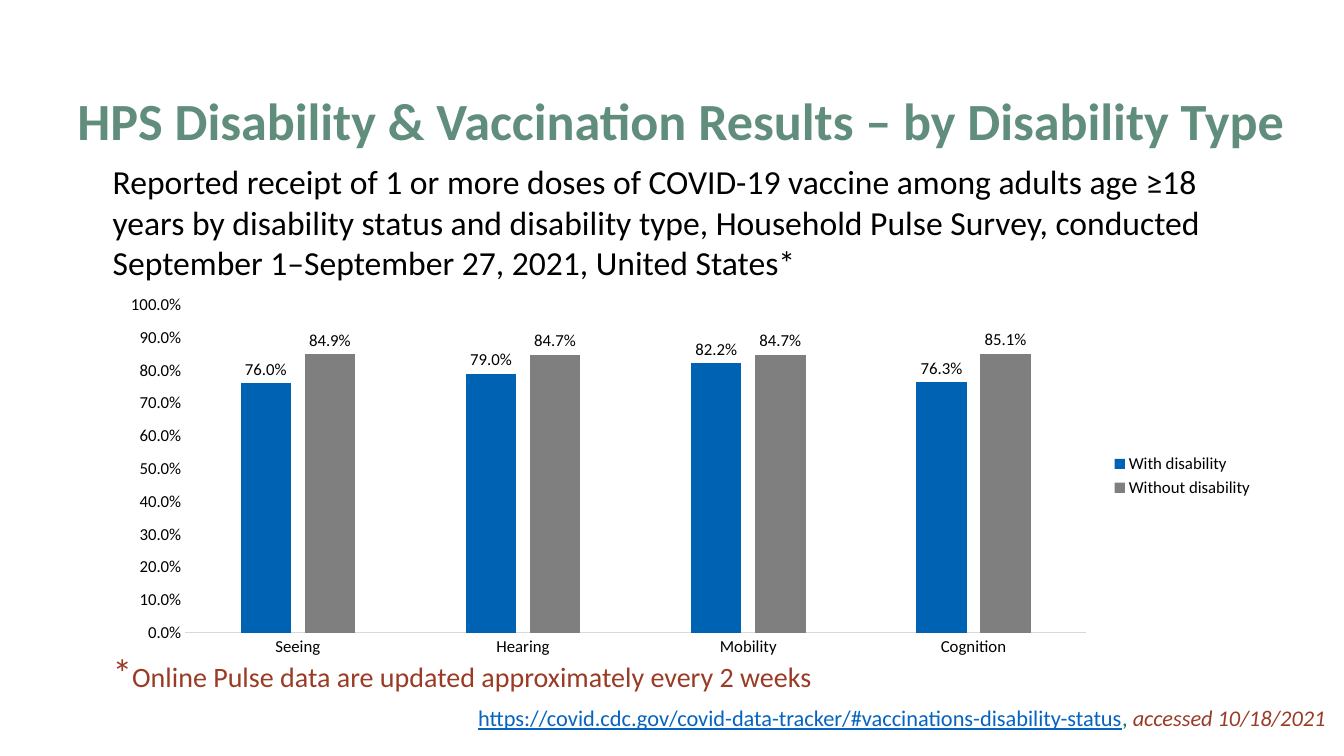
"""Build a slide on vaccination results by disability type."""
from dataclasses import dataclass, field

from pptx import Presentation
from pptx import util as u
from pptx.chart import data as chart_data
from pptx.dml import color
from pptx.enum import chart as chart_enum
from pptx.enum import text

FONT = "Calibri"
PERCENT = "0.0%"
COLORS = {
    "title": "618E7C",
    "body": "000000",
    "note": "9A3B26",
    "link": "0563C1",
    "comma": "007D57",
    "axis": "D9D9D9",
    "With disability": "0062B3",
    "Without disability": "7F7F7F",
}
CATEGORIES = ["Seeing", "Hearing", "Mobility", "Cognition"]
VACCINATED = {
    "With disability": [0.76, 0.79, 0.822, 0.763],
    "Without disability": [0.849, 0.847, 0.847, 0.851],
}


@dataclass(frozen=True)
class Box:
    left: float
    top: float
    width: float
    height: float

    def lengths(self) -> list[u.Length]:
        return [u.Pt(value) for value in (self.left, self.top, self.width, self.height)]


@dataclass(frozen=True)
class Run:
    words: str
    size: float
    color: str
    styles: dict = field(default_factory=dict)


@dataclass(frozen=True)
class TextBlock:
    box: Box
    runs: list[Run]
    frame_format: dict = field(default_factory=dict)
    paragraph_format: dict = field(default_factory=dict)


TEXT_BLOCKS = [
    TextBlock(
        Box(48.24, 21.6, 886.32, 90),
        [Run("HPS Disability & Vaccination Results – by Disability Type", 37.3, "title", {"bold": True})],
        {"vertical_anchor": text.MSO_ANCHOR.BOTTOM},
        {"line_spacing": u.Pt(40)},
    ),
    TextBlock(
        Box(73.44, 111.6, 833.04, 94.32),
        [Run(
            "Reported receipt of 1 or more doses of COVID-19 vaccine among adults age ≥18 "
            "years by disability status and disability type, Household Pulse Survey, conducted "
            "September 1–September 27, 2021, United States*", 24, "body",
        )],
    ),
    TextBlock(
        Box(73.44, 459.36, 806.4, 41.04),
        [
            Run("*", 28, "note"),
            Run("Online Pulse data are updated approximately every 2 weeks", 20, "note"),
        ],
    ),
    TextBlock(
        Box(0, 499.75, 954, 26.65),
        [
            Run("https://covid.cdc.gov/covid-data-tracker/#vaccinations-disability-status",
                16, "link", {"underline": True}),
            Run(", ", 16, "comma"),
            Run("accessed 10/18/2021", 16, "note", {"italic": True}),
        ],
        {},
        {"alignment": text.PP_ALIGN.RIGHT},
    ),
]
CHART_BOX = Box(77.04, 205.2, 825.84, 269.28)


def rgb(name: str) -> color.RGBColor:
    return color.RGBColor.from_string(COLORS[name])


def apply_format(target: object, values: dict) -> None:
    for name, value in values.items():
        setattr(target, name, value)


def format_font(font: object, size: float, color_name: str, styles: dict | None = None) -> None:
    apply_format(font, {"name": FONT, "size": u.Pt(size), **(styles or {})})
    font.color.rgb = rgb(color_name)


def draw_text(slide: object, block: TextBlock) -> None:
    frame = slide.shapes.add_textbox(*block.box.lengths()).text_frame
    apply_format(frame, {"word_wrap": True, **block.frame_format})
    paragraph = frame.paragraphs[0]
    apply_format(paragraph, block.paragraph_format)
    for item in block.runs:
        run = paragraph.add_run()
        run.text = item.words
        format_font(run.font, item.size, item.color, item.styles)


def draw_chart(slide: object, box: Box) -> None:
    rates = chart_data.CategoryChartData(number_format=PERCENT)
    rates.categories = CATEGORIES
    for name, values in VACCINATED.items():
        rates.add_series(name, values)
    chart = slide.shapes.add_chart(
        chart_enum.XL_CHART_TYPE.COLUMN_CLUSTERED, *box.lengths(), rates
    ).chart
    apply_format(chart, {"has_title": False, "has_legend": True})
    format_font(chart.font, 10, "body")
    apply_format(chart.legend, {
        "position": chart_enum.XL_LEGEND_POSITION.RIGHT,
        "include_in_layout": False,
    })
    format_font(chart.legend.font, 12, "body")

    for axis in (chart.category_axis, chart.value_axis):
        apply_format(axis, {
            "has_major_gridlines": False,
            "major_tick_mark": chart_enum.XL_TICK_MARK.NONE,
            "minor_tick_mark": chart_enum.XL_TICK_MARK.NONE,
        })
        format_font(axis.tick_labels.font, 12, "body")
    category_line = chart.category_axis.format.line
    category_line.color.rgb = rgb("axis")
    category_line.width = u.Pt(0.75)
    apply_format(chart.value_axis, {"minimum_scale": 0, "maximum_scale": 1, "major_unit": 0.1})
    chart.value_axis.format.line.fill.background()
    label_format = {"number_format": PERCENT, "number_format_is_linked": False}
    apply_format(chart.value_axis.tick_labels, label_format)

    plot = chart.plots[0]
    apply_format(plot, {"gap_width": 219, "overlap": -27, "vary_by_categories": False})
    for series in plot.series:
        series.format.fill.solid()
        series.format.fill.fore_color.rgb = rgb(series.name)
        labels = series.data_labels
        apply_format(labels, {
            **label_format,
            "show_value": True,
            "position": chart_enum.XL_LABEL_POSITION.OUTSIDE_END,
        })
        format_font(labels.font, 12, "body")


def main() -> None:
    presentation = Presentation()
    apply_format(presentation, {"slide_width": u.Pt(960), "slide_height": u.Pt(540)})
    slide = presentation.slides.add_slide(presentation.slide_layouts[6])
    draw_chart(slide, CHART_BOX)
    for block in TEXT_BLOCKS:
        draw_text(slide, block)
    presentation.save("out.pptx")


if __name__ == "__main__":
    main()
